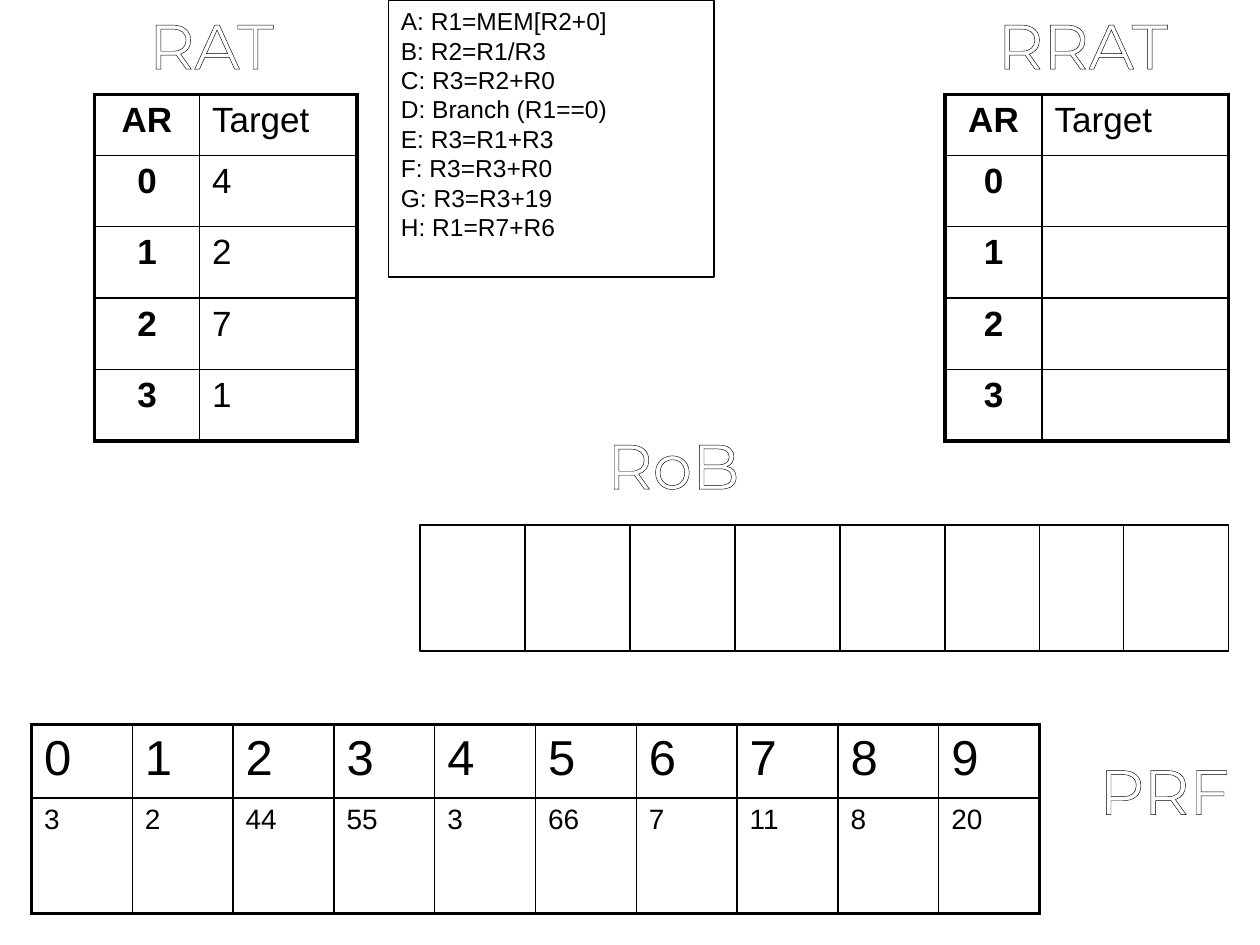
from lxml.etree import SubElement
from pptx import Presentation
from pptx.dml.color import RGBColor
from pptx.enum.shapes import MSO_CONNECTOR as CONN, MSO_SHAPE as SHAPE
from pptx.enum.text import MSO_ANCHOR as ANCHOR, PP_ALIGN as ALIGN
from pptx.oxml import parse_xml
from pptx.oxml.ns import qn
from pptx.util import Pt


def color(value):
    return RGBColor.from_string(value)


class Diagram:
    ink, paper = "000000", "FFFFFF"
    font, heading_font = "Arial", "Montserrat"
    thin, inner, outer = 0.75, 1, 2.25

    def __init__(self, slide):
        self.s = slide

    def style(self, font, size, bold=False):
        font.name, font.size, font.bold = self.font, Pt(size), bold
        font.color.rgb = color(self.ink)

    def box(self, x, y, w, h, lines=(), size=14):
        sp = self.s.shapes.add_shape(SHAPE.RECTANGLE, Pt(x), Pt(y), Pt(w), Pt(h))
        sp.shadow.inherit = False
        sp.fill.background()
        sp.line.color.rgb = color(self.ink)
        sp.line.width = Pt(self.thin)
        if lines:
            tf = sp.text_frame
            tf.word_wrap = True
            tf.vertical_anchor = ANCHOR.TOP
            tf.text = "\n".join(lines)
            for p in tf.paragraphs:
                p.alignment = ALIGN.LEFT
                self.style(p.font, size)

    def divider(self, x, top, bottom):
        line = self.s.shapes.add_connector(CONN.STRAIGHT, Pt(x), Pt(top), Pt(x), Pt(bottom))
        line.line.color.rgb = color(self.ink)
        line.line.width = Pt(self.thin)
        SubElement(line._element.spPr, qn("a:effectLst"))

    def heading(self, text, x, y):
        sp = self.s.shapes.add_textbox(Pt(x), Pt(y), Pt(109.5), Pt(51))
        tf = sp.text_frame
        tf.word_wrap = False
        # No side margins, so the widest heading stays on one line
        tf.margin_left = tf.margin_right = 0
        p = tf.paragraphs[0]
        p.alignment = ALIGN.CENTER
        r = p.add_run()
        r.text = text
        r.font.name, r.font.size = self.heading_font, Pt(36)
        r.font.color.rgb = color(self.paper)
        # Outlined letters
        r.font._element.insert(0, parse_xml(
            '<a:ln xmlns:a="http://schemas.openxmlformats.org/drawingml/2006/main" '
            f'w="{Pt(self.thin)}"><a:solidFill><a:srgbClr val="{self.ink}"/>'
            '</a:solidFill></a:ln>'))

    def border(self, cell, side, width):
        ln = SubElement(cell._tc.get_or_add_tcPr(), qn(f"a:ln{side}"), w=str(Pt(width)))
        SubElement(SubElement(ln, qn("a:solidFill")), qn("a:srgbClr"), val=self.ink)

    def table(self, x, y, widths, heights, rows, sizes, key_column=False):
        n_rows, n_cols = len(heights), len(widths)
        table = self.s.shapes.add_table(n_rows, n_cols, Pt(x), Pt(y),
                                        Pt(sum(widths)), Pt(sum(heights))).table
        table.first_row = table.horz_banding = False
        for column, w in zip(table.columns, widths):
            column.width = Pt(w)
        for row, h in zip(table.rows, heights):
            row.height = Pt(h)
        for i, row in enumerate(rows):
            for j, text in enumerate(row):
                cell = table.cell(i, j)
                edges = {"L": j == 0, "R": j == n_cols - 1, "T": i == 0, "B": i == n_rows - 1}
                for side, at_edge in edges.items():
                    self.border(cell, side, self.outer if at_edge else self.inner)
                cell.fill.background()
                is_key = key_column and j == 0
                p = cell.text_frame.paragraphs[0]
                if text:
                    p.text = text
                p.alignment = ALIGN.CENTER if is_key else ALIGN.LEFT
                self.style(p.font, sizes[i], is_key)

    def alias_table(self, x, widths, targets):
        rows = [("AR", "Target")] + [(str(i), t) for i, t in enumerate(targets)]
        self.table(x, 54, widths, [34.8] + [40.8] * 4, rows, [20] * 5, key_column=True)


def main():
    prs = Presentation()
    prs.slide_width, prs.slide_height = Pt(720), Pt(540)
    d = Diagram(prs.slides.add_slide(prs.slide_layouts[6]))

    # Instruction listing
    d.box(222, 0, 186, 158.4, [
        "A: R1=MEM[R2+0]", "B: R2=R1/R3", "C: R3=R2+R0", "D: Branch (R1==0)",
        "E: R3=R1+R3", "F: R3=R3+R0", "G: R3=R3+19", "H: R1=R7+R6"])

    # Reorder buffer
    d.box(240, 300, 462, 72)
    for x in (*range(300, 541, 60), 594, 642):
        d.divider(x, 300, 372)

    # Register alias tables
    d.alias_table(540, [55.5, 106.5], [""] * 4)
    d.alias_table(54, [60, 90], ["4", "2", "7", "1"])

    # Physical register file
    values = ["3", "2", "44", "55", "3", "66", "7", "11", "8", "20"]
    d.table(18, 414, [57.6] * 10, [42, 66],
            [[str(i) for i in range(10)], values], [28, 16])

    # Headings
    for text, x, y in (("RRAT", 564, 0), ("RAT", 66, 0), ("RoB", 330, 240), ("PRF", 610.5, 426)):
        d.heading(text, x, y)

    prs.save("out.pptx")


if __name__ == "__main__":
    main()
